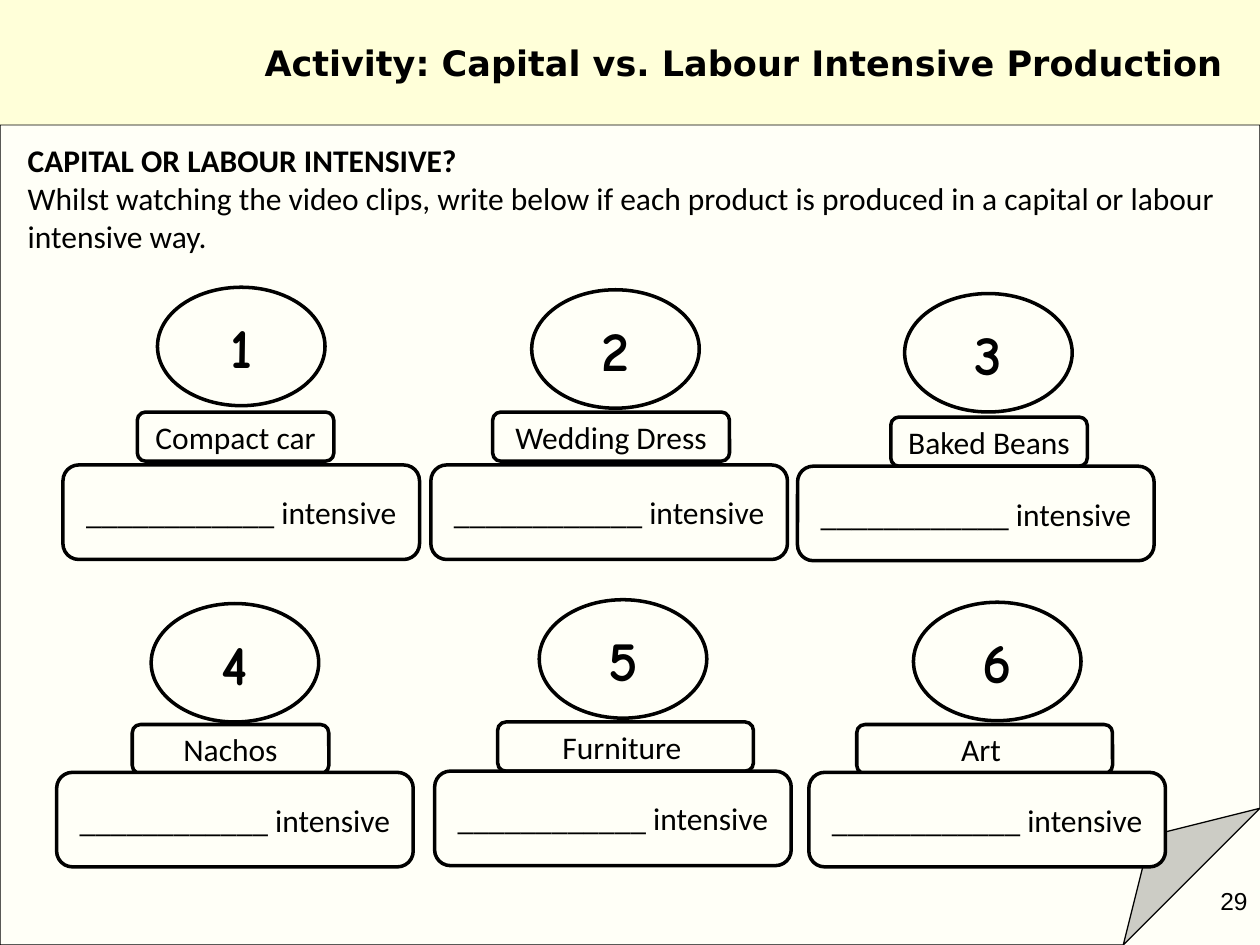
from pptx import Presentation
from pptx.dml.color import RGBColor
from pptx.enum.shapes import MSO_SHAPE
from pptx.enum.text import MSO_ANCHOR, PP_ALIGN
from pptx.util import Inches, Pt

FOLDED, RECT = MSO_SHAPE.FOLDED_CORNER, MSO_SHAPE.RECTANGLE
OVAL, ROUNDED = MSO_SHAPE.OVAL, MSO_SHAPE.ROUNDED_RECTANGLE
TOP, MIDDLE = MSO_ANCHOR.TOP, MSO_ANCHOR.MIDDLE
LEFT, CENTER, RIGHT = PP_ALIGN.LEFT, PP_ALIGN.CENTER, PP_ALIGN.RIGHT

BLACK = RGBColor(0x00, 0x00, 0x00)
PAPER = RGBColor(0xFF, 0xFF, 0xF7)
BANNER = RGBColor(0xFF, 0xFF, 0xD9)

BODY = {"name": "Calibri", "size": Pt(18), "bold": False}
HEADING = {**BODY, "bold": True}
NUMBER = {"name": "Comic Neue", "size": Pt(32), "bold": True}
TITLE = {"name": "DejaVu Sans", "size": Pt(20), "bold": True}
PAGE = {"name": "Arial", "size": Pt(14), "bold": False}

OVAL_SIZE = (1.33, 0.94)
LABEL_HEIGHT = 0.39
ANSWER_SIZE = (2.83, 0.75)

# Product, label width, then (left, top) of number, label and answer box
CARDS = [
    ("Compact car", 1.56, (1.25, 2.28), (1.09, 3.27), (0.5, 3.69)),
    ("Wedding Dress", 1.88, (4.22, 2.3), (3.91, 3.27), (3.42, 3.69)),
    ("Baked Beans", 1.56, (7.18, 2.33), (7.07, 3.31), (6.33, 3.7)),
    ("Nachos", 1.56, (1.2, 4.79), (1.05, 5.75), (0.45, 6.13)),
    ("Furniture ", 2.03, (4.28, 4.76), (3.95, 5.73), (3.45, 6.12)),
    ("Art ", 2.03, (7.25, 4.78), (6.8, 5.75), (6.42, 6.13)),
]


def write(sp, lines, align, anchor):
    """Fill a shape with (text, format) lines, one paragraph each."""
    tf = sp.text_frame
    tf.word_wrap = True
    tf.vertical_anchor = anchor
    for i, (text, fmt) in enumerate(lines):
        p = tf.paragraphs[0] if i == 0 else tf.add_paragraph()
        p.alignment = align
        r = p.add_run()
        r.text = text
        for key, value in fmt.items():
            setattr(r.font, key, value)
        r.font.color.rgb = BLACK
    return tf


def add_box(shapes, kind, pos, size, lines, fill=PAPER, line=2,
            align=CENTER, anchor=MIDDLE):
    sp = shapes.add_shape(kind, *map(Inches, (*pos, *size)))
    sp.shadow.inherit = False
    sp.fill.solid()
    sp.fill.fore_color.rgb = fill
    if line:
        sp.line.color.rgb = BLACK
        sp.line.width = Pt(line)
    else:
        sp.line.fill.background()
    return write(sp, lines, align, anchor)


def add_card(s, number, product, label_width, oval_pos, label_pos, answer_pos):
    shapes = s.shapes.add_group_shape().shapes
    add_box(shapes, OVAL, oval_pos, OVAL_SIZE, [(str(number), NUMBER)])
    add_box(shapes, ROUNDED, label_pos, (label_width, LABEL_HEIGHT),
            [(product, BODY)])
    add_box(shapes, ROUNDED, answer_pos, ANSWER_SIZE,
            [("____________ intensive", BODY)])


def add_page(s):
    tf = add_box(s.shapes, FOLDED, (0, 0.99), (10, 6.51), [
        ("CAPITAL OR LABOUR INTENSIVE?", HEADING),
        ("Whilst watching the video clips, write below if each product is "
         "produced in a capital or labour intensive way.", BODY),
    ], line=0.75, align=LEFT, anchor=TOP)
    tf.margin_left = tf.margin_right = Inches(0.22)
    tf.margin_top = tf.margin_bottom = Inches(0.13)


def add_title(s):
    tf = add_box(s.shapes, RECT, (0, 0), (10, 0.99),
                 [("Activity: Capital vs. Labour Intensive Production", TITLE)],
                 fill=BANNER, line=None, align=LEFT)
    tf.margin_left = Inches(2.1)


def add_page_number(s):
    sp = s.shapes.add_textbox(*map(Inches, (7.67, 6.98, 2.33, 0.52)))
    write(sp, [("29", PAGE)], RIGHT, TOP)


def main():
    prs = Presentation()
    prs.slide_width, prs.slide_height = Inches(10), Inches(7.5)
    s = prs.slides.add_slide(prs.slide_layouts[6])
    s.background.fill.solid()
    s.background.fill.fore_color.rgb = PAPER

    # Page with folded corner, and title banner
    add_page(s)
    add_page_number(s)
    add_title(s)

    # Numbered product cards
    for number, card in enumerate(CARDS, 1):
        add_card(s, number, *card)

    prs.save("out.pptx")


if __name__ == "__main__":
    main()
